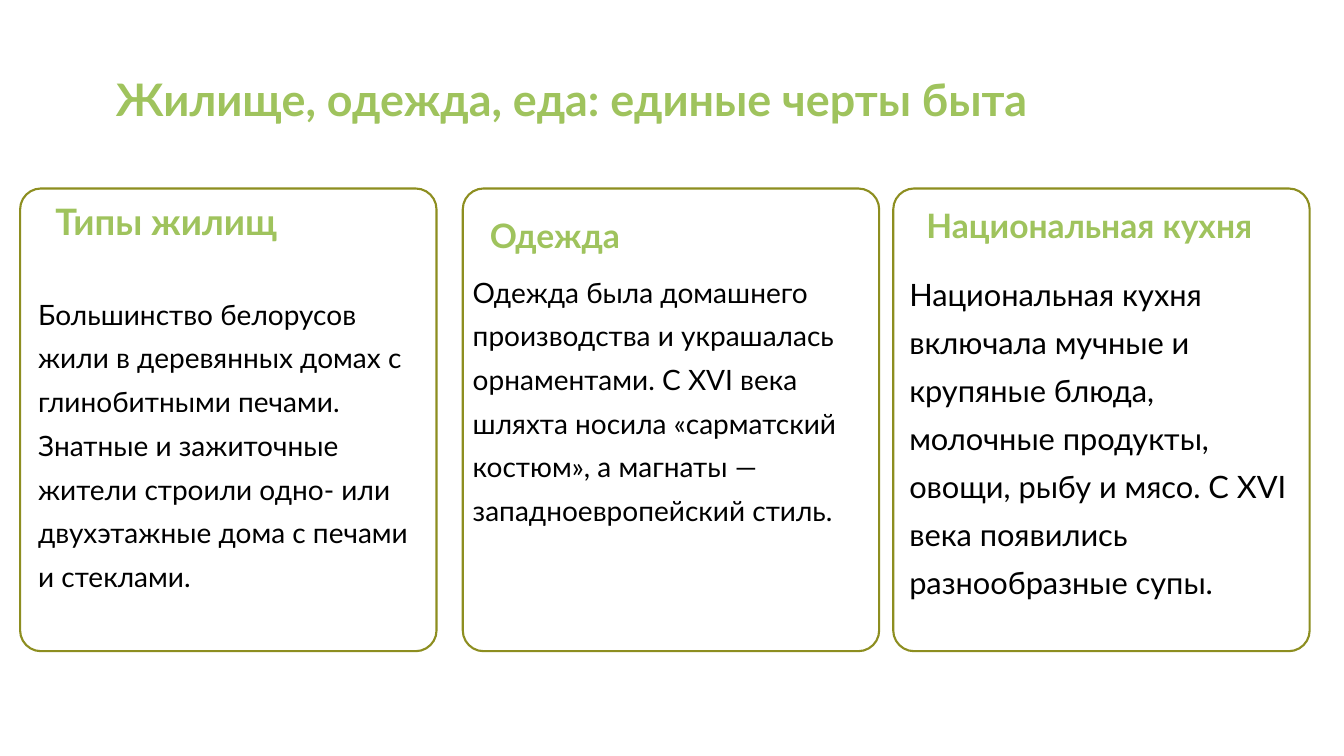
from pptx import Presentation
from pptx.dml.color import RGBColor
from pptx.enum import shapes, text
from pptx.util import Emu, Pt

PX = 9144
GREEN, OLIVE, BLACK, WHITE = "9FC35D", "8D8E20", "000000", "FFFFFF"
CARD_TOP, CARD_WIDTH, CARD_HEIGHT = 187, 413, 459

TITLE = "Жилище, одежда, еда: единые черты быта"
CARDS = [
    {
        "left": 20,
        "heading": ("Типы жилищ", (45, 193, 383, 53), 26),
        "body": (
            "Большинство белорусов жили в деревянных домах с глинобитными печами. "
            "Знатные и зажиточные жители строили одно- или двухэтажные дома "
            "с печами и стеклами.",
            (28, 280, 408, 313), 20),
    },
    {
        "left": 459,
        "heading": ("Одежда", (476, 208, 377, 50), 24),
        "body": (
            "Одежда была домашнего производства и украшалась орнаментами. "
            "С XVI века шляхта носила «сарматский костюм», а магнаты — "
            "западноевропейский стиль.",
            (459, 258, 402, 270), 20),
    },
    {
        "left": 886,
        "heading": ("Национальная кухня", (909, 198, 377, 50), 24),
        "body": (
            "Национальная кухня включала мучные и крупяные блюда, молочные "
            "продукты, овощи, рыбу и мясо. С XVI века появились "
            "разнообразные супы.",
            (892, 258, 402, 344), 22),
    },
]


def px(length):
    return Emu(length * PX)


def color(value):
    return RGBColor.from_string(value)


def set_all(target, values):
    for name, value in values.items():
        setattr(target, name, value)


def write(box, words, size, shade, bold=False, spacing=1.0):
    frame = box.text_frame
    set_all(frame, {
        "word_wrap": True,
        "auto_size": text.MSO_AUTO_SIZE.NONE,
        "vertical_anchor": text.MSO_ANCHOR.TOP,
    })
    para = frame.paragraphs[0]
    set_all(para, {"alignment": text.PP_ALIGN.LEFT, "line_spacing": spacing})
    span = para.add_run()
    span.text = words
    set_all(span.font, {"name": "Lato", "size": Pt(size), "bold": bold})
    span.font.color.rgb = color(shade)


def add_frame(page, left):
    card = page.shapes.add_shape(
        shapes.MSO_SHAPE.ROUNDED_RECTANGLE,
        *map(px, (left, CARD_TOP, CARD_WIDTH, CARD_HEIGHT)))
    card.adjustments[0] = 0.05
    card.shadow.inherit = False
    card.fill.solid()
    card.fill.fore_color.rgb = color(WHITE)
    card.line.color.rgb = color(OLIVE)
    card.line.width = Pt(1.5)


def add_text(page, entry, **style):
    words, place, size = entry
    box = page.shapes.add_textbox(*map(px, place))
    write(box, words, size, **style)


def main():
    deck = Presentation()
    set_all(deck, {"slide_width": px(1333), "slide_height": px(750)})
    page = deck.slides.add_slide(deck.slide_layouts[5])
    title = page.shapes.title
    set_all(title, {"left": px(105), "top": px(66),
                    "width": px(1072), "height": px(54)})
    write(title, TITLE, 32, GREEN, bold=True)

    for card in CARDS:
        add_frame(page, card["left"])
        add_text(page, card["heading"], shade=GREEN, bold=True)
        add_text(page, card["body"], shade=BLACK, spacing=1.3)

    deck.save("out.pptx")


if __name__ == "__main__":
    main()
